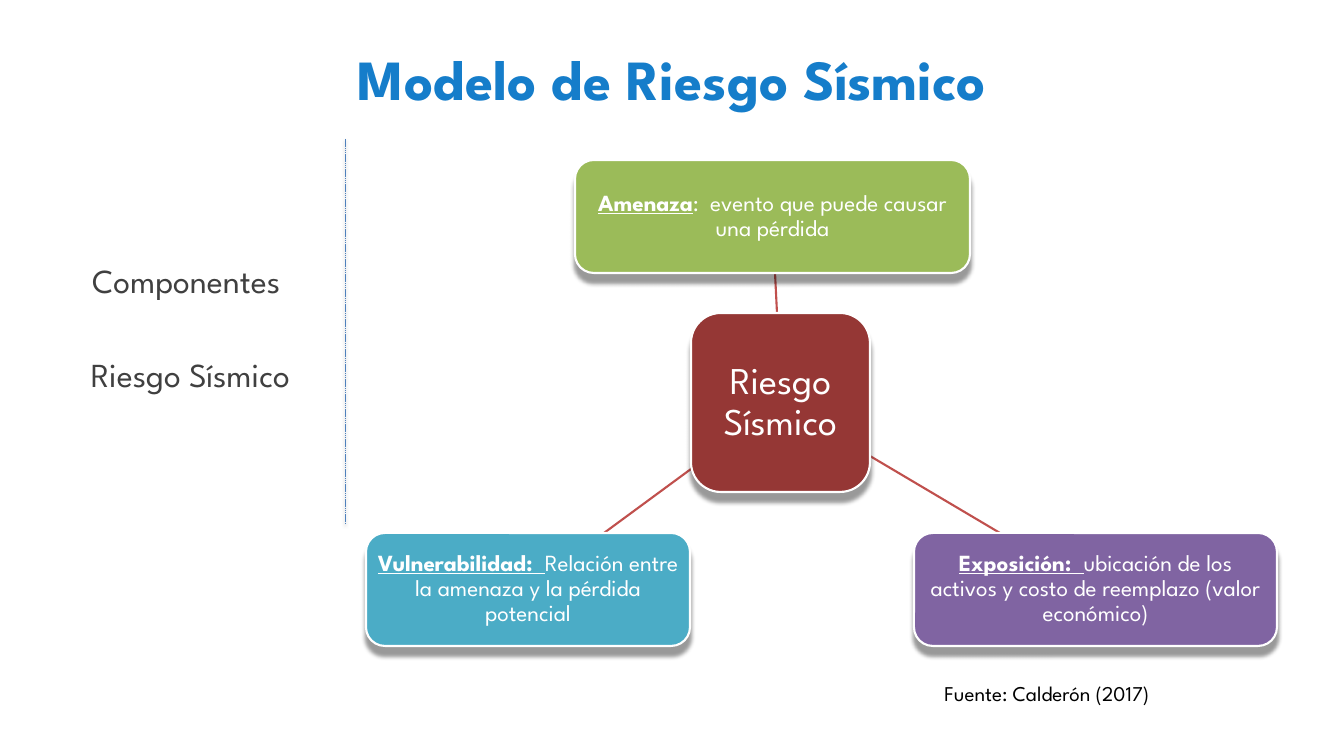
from lxml.etree import SubElement
from pptx import Presentation
from pptx.dml.color import RGBColor
from pptx.enum.dml import MSO_LINE
from pptx.enum.shapes import MSO_CONNECTOR, MSO_SHAPE
from pptx.enum.text import MSO_ANCHOR, MSO_AUTO_SIZE, PP_ALIGN
from pptx.oxml.ns import qn
from pptx.util import Pt

PX = 12095
FONT = "League Spartan"
COLORS = {
    "title": "157DCA", "body": "404040", "black": "000000", "white": "FFFFFF",
    "divider": "4F81BD", "link": "C0504D", "risk": "953735",
    "hazard": "9BBB59", "exposure": "8064A2", "vulnerability": "4BACC6",
}


def style_font(font, size, color, bold=None):
    font.name = FONT
    font.size = Pt(size)
    font.bold = bold
    font.color.rgb = RGBColor.from_string(COLORS[color])


def set_effects(shape, shadow=None):
    effects = SubElement(shape._element.spPr, qn("a:effectLst"))
    if shadow:
        blur, distance, opacity = shadow
        outer = SubElement(effects, qn("a:outerShdw"), blurRad=str(Pt(blur)),
                           dist=str(Pt(distance)), dir="5400000", rotWithShape="0")
        color = SubElement(outer, qn("a:srgbClr"), val=COLORS["black"])
        SubElement(color, qn("a:alpha"), val=str(opacity * 1000))


presentation = Presentation()
presentation.slide_width = 1344 * PX
presentation.slide_height = 735 * PX
slide = presentation.slides.add_slide(presentation.slide_layouts[1])

title = slide.shapes.title
body = slide.placeholders[1]
for placeholder, box in ((title, (67, 17, 1210, 122)), (body, (35, 160, 311, 487))):
    placeholder.left, placeholder.top, placeholder.width, placeholder.height = (
        value * PX for value in box)
    placeholder.text_frame.auto_size = MSO_AUTO_SIZE.NONE

title.text_frame.text = "Modelo de Riesgo Sísmico"
title.text_frame.vertical_anchor = MSO_ANCHOR.MIDDLE
title.text_frame.paragraphs[0].alignment = PP_ALIGN.CENTER
style_font(title.text_frame.paragraphs[0].font, 54, "title", True)

body.text_frame.text = "Componentes \nRiesgo Sísmico"
body.text_frame.margin_top = 100 * PX
for paragraph, space in zip(body.text_frame.paragraphs, (0, 51)):
    paragraph.alignment = PP_ALIGN.CENTER
    paragraph.space_before = Pt(space)
    properties = paragraph._p.get_or_add_pPr()
    properties.set("marL", "0")
    properties.set("indent", "0")
    SubElement(properties, qn("a:buNone"))
    style_font(paragraph.font, 32, "body")

lines = [
    ((345, 139, 345, 524), "divider", 0.5, MSO_LINE.SQUARE_DOT, (3.1, 1.6, 38)),
    ((777, 313, 775, 272), "link", 2, None, None),
    ((870, 456, 1000, 533), "link", 2, None, None),
    ((691, 469, 604, 533), "link", 2, None, None),
]
for ends, color, width, dash, shadow in lines:
    connector = slide.shapes.add_connector(
        MSO_CONNECTOR.STRAIGHT, *(value * PX for value in ends))
    connector.line.color.rgb = RGBColor.from_string(COLORS[color])
    connector.line.width = Pt(width)
    connector.line.dash_style = dash
    set_effects(connector, shadow)

cards = [
    ((691, 313, 179, 179), "risk", 36, 8, "", "Riesgo Sísmico"),
    ((575, 160, 395, 113), "hazard", 22, 5, "Amenaza",
     ":  evento que puede causar una pérdida"),
    ((914, 533, 363, 113), "exposure", 22, 5, "Exposición:  ",
     "ubicación de los activos y costo de reemplazo (valor económico)"),
    ((366, 533, 324, 113), "vulnerability", 22, 5, "Vulnerabilidad:  ",
     "Relación entre la amenaza y la pérdida potencial"),
]
for box, color, size, margin, term, definition in cards:
    card = slide.shapes.add_shape(
        MSO_SHAPE.ROUNDED_RECTANGLE, *(value * PX for value in box))
    card.fill.solid()
    card.fill.fore_color.rgb = RGBColor.from_string(COLORS[color])
    card.line.color.rgb = RGBColor.from_string(COLORS["white"])
    card.line.width = Pt(2)
    set_effects(card, (4, 9, 40))
    frame = card.text_frame
    frame.word_wrap = True
    frame.vertical_anchor = MSO_ANCHOR.MIDDLE
    frame.margin_left = frame.margin_right = margin * PX
    frame.margin_top = frame.margin_bottom = margin * PX
    paragraph = frame.paragraphs[0]
    paragraph.alignment = PP_ALIGN.CENTER
    paragraph.line_spacing = 0.9
    style_font(paragraph.font, size, "white")
    if term:
        run = paragraph.add_run()
        run.text = term
        run.font.bold = True
        run.font.underline = True
    paragraph.add_run().text = definition

source = slide.shapes.add_textbox(937 * PX, 677 * PX, 327 * PX, 33 * PX)
source.text_frame.word_wrap = True
source.text_frame.text = "Fuente: Calderón (2017)"
style_font(source.text_frame.paragraphs[0].font, 20, "black")

presentation.save("out.pptx")
